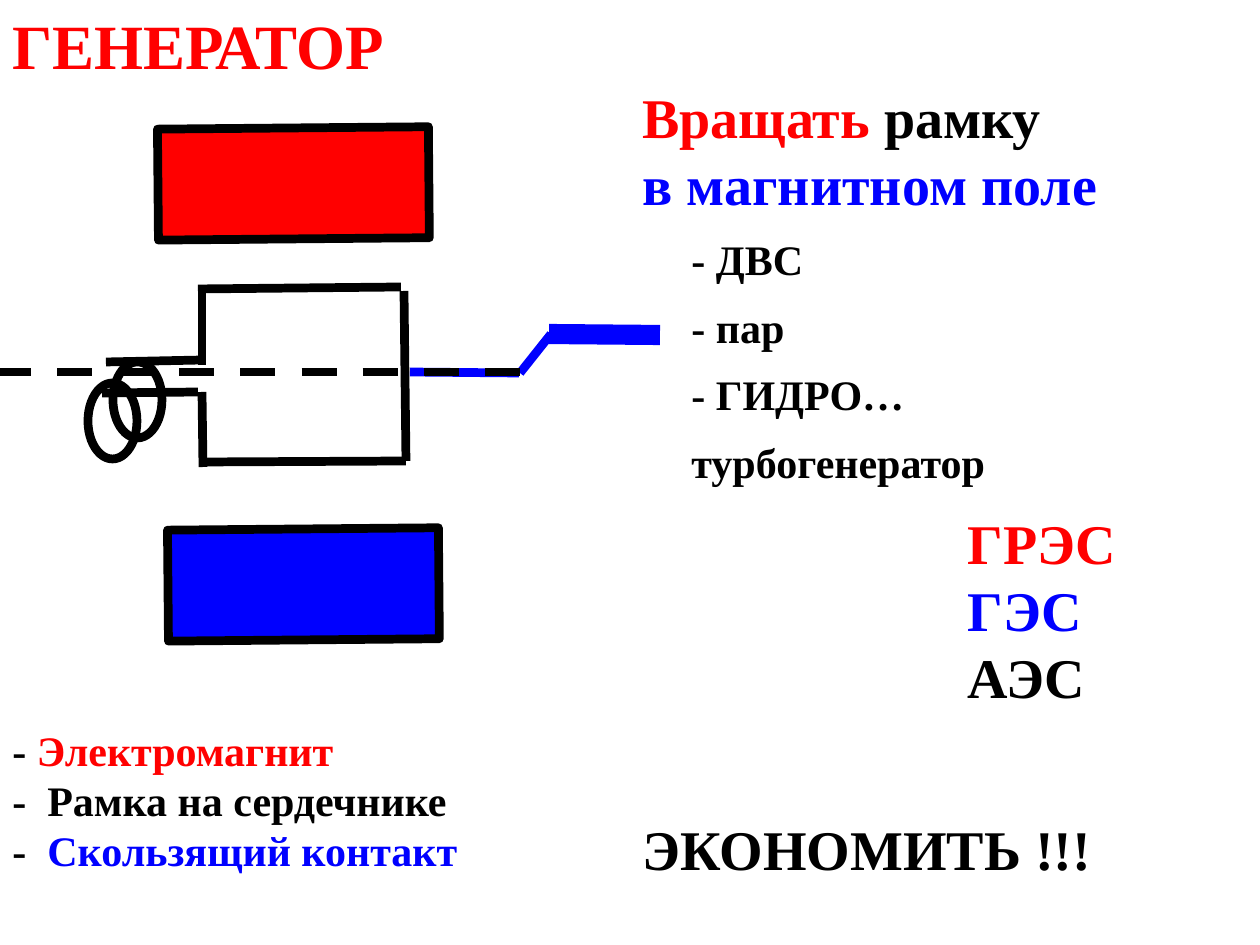
from dataclasses import dataclass

from lxml import etree
from pptx import Presentation
from pptx.dml.color import RGBColor
from pptx.enum.dml import MSO_LINE
from pptx.enum.shapes import MSO_CONNECTOR, MSO_SHAPE
from pptx.oxml.ns import qn
from pptx.util import Emu, Pt

RECTANGLE, OVAL = MSO_SHAPE.RECTANGLE, MSO_SHAPE.OVAL
STRAIGHT = MSO_CONNECTOR.STRAIGHT
DASH = MSO_LINE.DASH
EMU_PER_PX = 914400 / 126


@dataclass(frozen=True)
class Theme:
    font: str = "Times New Roman"
    red: RGBColor = RGBColor(255, 0, 0)
    blue: RGBColor = RGBColor(0, 0, 255)
    black: RGBColor = RGBColor(0, 0, 0)
    title_size: int = 36
    heading_size: int = 32
    body_size: int = 24
    stroke: float = 5
    handle_stroke: float = 11.5


THEME = Theme()


def px(length):
    return Emu(round(length * EMU_PER_PX))


def add_outlined(slide, kind, left, top, width, height, fill=None):
    shape = slide.shapes.add_shape(kind, px(left), px(top), px(width), px(height))
    shape.shadow.inherit = False
    if fill is None:
        shape.fill.background()
    else:
        shape.fill.solid()
        shape.fill.fore_color.rgb = fill
    shape.line.color.rgb = THEME.black
    shape.line.width = Pt(THEME.stroke)
    return shape


def add_wire(slide, left, top, ends, color=THEME.black, stroke=THEME.stroke):
    """Draw a line whose ends (x1, y1, x2, y2) are relative to left, top."""
    x1, y1, x2, y2 = ends
    wire = slide.shapes.add_connector(
        STRAIGHT, px(left + x1), px(top + y1), px(left + x2), px(top + y2))
    wire.line.color.rgb = color
    wire.line.width = Pt(stroke)
    etree.SubElement(wire._element.spPr, qn("a:effectLst"))
    return wire


def add_text(slide, box, paragraphs, size, space_after=0):
    """Each paragraph is a list of (text, color) runs."""
    frame = slide.shapes.add_textbox(*map(px, box)).text_frame
    frame.word_wrap = True
    for index, runs in enumerate(paragraphs):
        paragraph = frame.paragraphs[0] if index == 0 else frame.add_paragraph()
        paragraph.space_after = Pt(space_after)
        for text, color in runs:
            run = paragraph.add_run()
            run.text = text
            run.font.name = THEME.font
            run.font.size = Pt(size)
            run.font.bold = True
            run.font.color.rgb = color


def add_magnets(slide, left, top):
    for x, y, color in ((158, 8, THEME.red), (168, 409, THEME.blue)):
        magnet = add_outlined(slide, RECTANGLE, left + x, top + y, 271, 111, color)
        magnet.rotation = -0.5


def add_frame(slide, left, top):
    """Draw the wire frame with its two leads to the slip rings."""
    sides = (
        (401, 167, 198, 169),
        (406, 341, 203, 342),
        (404, 171, 406, 341),
        (202, 170, 202, 245),
        (202, 272, 203, 347),
    )
    leads = ((202, 240, 106, 242), (198, 272, 102, 273))
    for ends in sides + leads:
        add_wire(slide, left, top, ends)


def add_crank(slide, left, top):
    add_wire(slide, left, top, (410, 252, 519, 253), THEME.blue)
    add_wire(slide, left, top, (520, 253, 551, 214), THEME.blue)
    add_wire(slide, left, top, (549, 214, 660, 215), THEME.blue, THEME.handle_stroke)


def add_generator(slide, left, top):
    add_magnets(slide, left, top)
    add_frame(slide, left, top)
    add_crank(slide, left, top)
    for x, y in ((88, 263), (113, 242)):
        add_outlined(slide, OVAL, left + x, top + y, 49, 76)
    axis = add_wire(slide, left, top, (-4, 252, 534, 252))
    axis.line.dash_style = DASH


def add_drives(slide, left, top):
    """Write the principle, the drives, and the stations that use them."""
    add_text(slide, (left, top, 581, 149), [
        [("Вращать ", THEME.red), ("рамку", THEME.black)],
        [("в магнитном поле", THEME.blue)],
    ], THEME.heading_size)
    drives = ("- ДВС", "- пар", "- ГИДРО…", "турбогенератор")
    add_text(slide, (left + 49, top + 151, 374, 276),
             [[(drive, THEME.black)] for drive in drives],
             THEME.body_size, space_after=10)
    stations = (("ГРЭС", THEME.red), ("ГЭС", THEME.blue), ("АЭС", THEME.black))
    add_text(slide, (left + 325, top + 426, 256, 217),
             [[station] for station in stations], THEME.heading_size)


def add_parts_list(slide, left, top):
    add_text(slide, (left, top, 473, 165), [
        [("- ", THEME.black), ("Электромагнит", THEME.red)],
        [("-  Рамка на сердечнике", THEME.black)],
        [("-  ", THEME.black), ("Скользящий контакт", THEME.blue)],
    ], THEME.body_size)


def main():
    presentation = Presentation()
    presentation.slide_width, presentation.slide_height = px(1260), px(945)
    slide = presentation.slides.add_slide(presentation.slide_layouts[6])
    add_generator(slide, 0, 120)
    add_text(slide, (0, 0, 444, 89), [[("ГЕНЕРАТОР", THEME.red)]], THEME.title_size)
    add_drives(slide, 630, 76)
    add_parts_list(slide, 0, 718)
    add_text(slide, (630, 808, 501, 81), [[("ЭКОНОМИТЬ !!!", THEME.black)]],
             THEME.heading_size)
    presentation.save("out.pptx")


if __name__ == "__main__":
    main()
